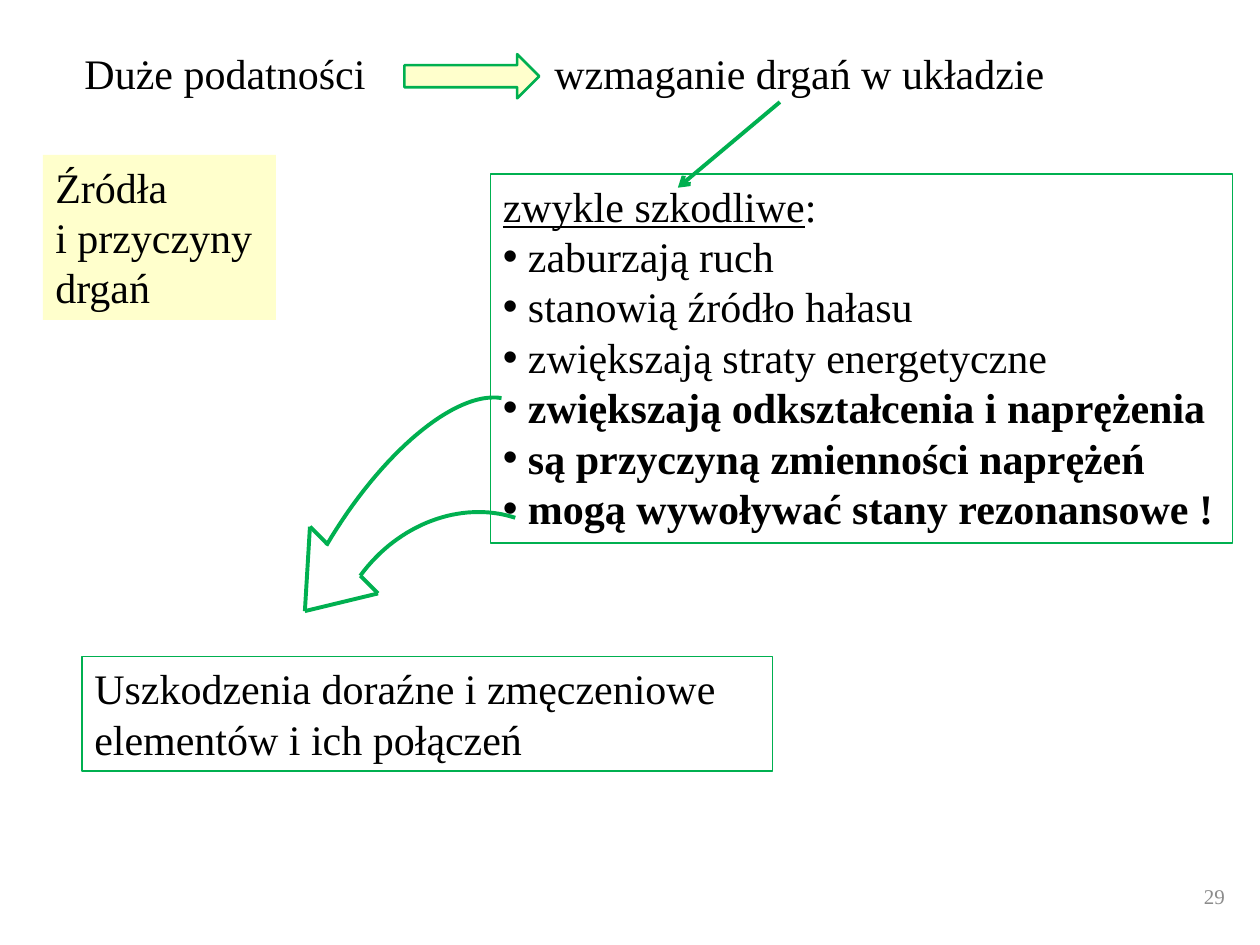
"""Build a slide on the sources and harmful effects of vibrations."""
from itertools import pairwise
from lxml import etree
from pptx import Presentation
from pptx import util as u
from pptx.dml.color import RGBColor
from pptx.enum import shapes, text
from pptx.oxml import ns

GREEN, CREAM, BLACK, GRAY = "00B050", "FFFFCC", "000000", "8C8C8C"


def paint(item, fill=None, line=None, width=0.75):
    if fill:
        item.fill.solid()
        item.fill.fore_color.rgb = RGBColor.from_string(fill)
    elif hasattr(item, "fill"):
        item.fill.background()
    if line:
        item.line.color.rgb = RGBColor.from_string(line)
        item.line.width = u.Pt(width)
    else:
        item.line.fill.background()
    if hasattr(item, "shadow"):
        item.shadow.inherit = False
    else:
        etree.SubElement(item.line._get_or_add_ln().getparent(), ns.qn("a:effectLst"))


def write(item, lines, size=24, color=BLACK, anchor=text.MSO_ANCHOR.TOP, align=text.PP_ALIGN.LEFT):
    frame = item.text_frame
    frame.word_wrap = True
    frame.auto_size = text.MSO_AUTO_SIZE.NONE
    frame.vertical_anchor = anchor
    for index, runs in enumerate(lines):
        paragraph = frame.add_paragraph() if index else frame.paragraphs[0]
        paragraph.alignment = align
        paragraph.space_before = u.Pt(0)
        for words, bold, underline in runs:
            run = paragraph.add_run()
            run.text = words
            run.font.name = "Times New Roman"
            run.font.size = u.Pt(size)
            run.font.bold = bold
            run.font.underline = underline
            run.font.color.rgb = RGBColor.from_string(color)


deck = Presentation()
deck.slide_width, deck.slide_height = u.Inches(10), u.Inches(7.5)
slide = deck.slides.add_slide(deck.slide_layouts[1])
canvas = slide.shapes

headline = canvas.title
headline.left, headline.top, headline.width, headline.height = map(u.Inches, (0.57, 0.33, 8.49, 0.5))
write(headline, [[("Duże podatności\twzmaganie drgań w układzie", False, False)]])
tabs = etree.SubElement(headline.text_frame.paragraphs[0]._p.get_or_add_pPr(), ns.qn("a:tabLst"))
etree.SubElement(tabs, ns.qn("a:tab"), pos=str(u.Inches(3.73)), algn="l")

effects = slide.placeholders[1]
effects.left, effects.top, effects.width, effects.height = map(u.Inches, (3.89, 1.38, 5.89, 2.93))
paint(effects, line=GREEN)
harms = [
    ("zaburzają ruch", False),
    ("stanowią źródło hałasu", False),
    ("zwiększają straty energetyczne", False),
    ("zwiększają odkształcenia i naprężenia", True),
    ("są przyczyną zmienności naprężeń", True),
    ("mogą wywoływać stany rezonansowe !", True),
]
write(effects, [[("zwykle szkodliwe", False, True), (":", False, False)]]
      + [[(harm, bold, False)] for harm, bold in harms])
for index, paragraph in enumerate(effects.text_frame.paragraphs):
    properties = paragraph._p.get_or_add_pPr()
    margin = u.Inches(0.2) if index else 0
    properties.set("marL", str(margin))
    properties.set("indent", str(-margin))
    if index:
        etree.SubElement(properties, ns.qn("a:buChar"), char="•")
    else:
        etree.SubElement(properties, ns.qn("a:buNone"))

captions = [
    ((0.34, 1.23, 1.85, 1.31), CREAM, None, ["Źródła", "i przyczyny drgań"]),
    ((0.65, 5.21, 5.48, 0.91), None, GREEN,
     ["Uszkodzenia doraźne i zmęczeniowe elementów i ich połączeń"]),
]
for place, fill, line, lines in captions:
    caption = canvas.add_shape(shapes.MSO_SHAPE.RECTANGLE, *map(u.Inches, place))
    paint(caption, fill, line)
    write(caption, [[(words, False, False)] for words in lines])

implication = canvas.add_shape(
    shapes.MSO_SHAPE.RIGHT_ARROW, *map(u.Inches, (3.21, 0.43, 1.07, 0.35)))
paint(implication, CREAM, GREEN, 1.5)

page_number = canvas.add_textbox(*map(u.Inches, (9.38, 6.91, 0.44, 0.4)))
write(page_number, [[("29", False, False)]], 12, GRAY, text.MSO_ANCHOR.MIDDLE, text.PP_ALIGN.RIGHT)

consequence_edges = [
    [(2.59, 4.33), (3.02, 3.6), (3.61, 3.1), (3.98, 3.16)],
    [(2.86, 4.57), (3.16, 4.16), (3.66, 3.97), (4.09, 4.11)],
]
steps = 32
for controls in consequence_edges:
    points = []
    for step in range(steps + 1):
        t = step / steps
        weights = ((1 - t) ** 3, 3 * t * (1 - t) ** 2, 3 * t ** 2 * (1 - t), t ** 3)
        points.append([u.Inches(sum(w * c for w, c in zip(weights, axis))) for axis in zip(*controls)])
    builder = canvas.build_freeform(*points[0])
    builder.add_line_segments(points[1:], close=False)
    paint(builder.convert_to_shape(), line=GREEN, width=2.25)

consequence_head = [(2.6, 4.32), (2.46, 4.18), (2.42, 4.85), (3, 4.71), (2.86, 4.57)]
harm_pointer = ((6.19, 0.81), (5.38, 1.49))
for start, end in [harm_pointer, *pairwise(consequence_head)]:
    stroke = canvas.add_connector(shapes.MSO_CONNECTOR.STRAIGHT, *map(u.Inches, start + end))
    paint(stroke, line=GREEN, width=2.25)
    if (start, end) == harm_pointer:
        etree.SubElement(stroke.line._get_or_add_ln(), ns.qn("a:tailEnd"), type="arrow")

deck.save("out.pptx")
